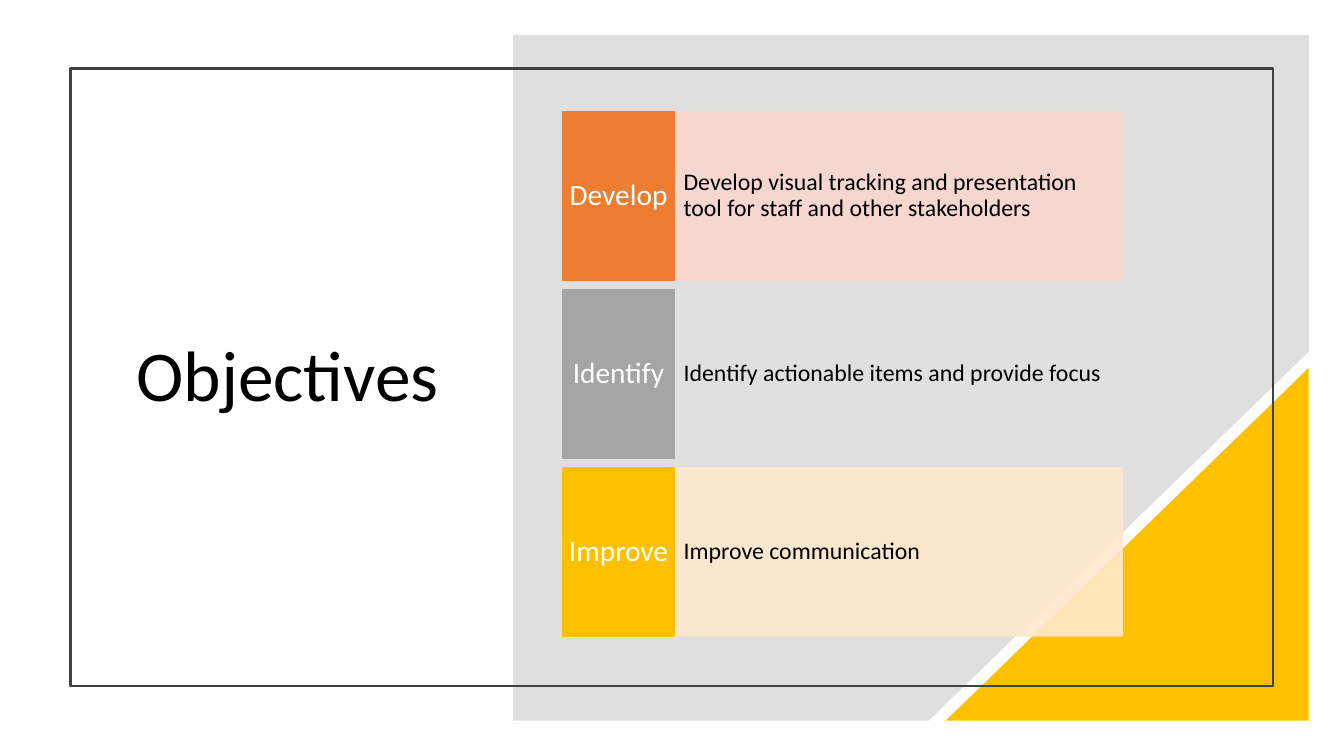
"""Build the Objectives slide with three labelled goals."""
from dataclasses import dataclass

import pptx
import pptx.dml.color
import pptx.enum.shapes
import pptx.enum.text
import pptx.oxml
import pptx.oxml.ns
import pptx.shapes.autoshape
import pptx.slide
import pptx.util
from pptx.dml.color import RGBColor
from pptx.util import Inches

WHITE = RGBColor(0xFF, 0xFF, 0xFF)
BLACK = RGBColor(0x00, 0x00, 0x00)
PANEL_GRAY = RGBColor(0x80, 0x80, 0x80)
FRAME_GRAY = RGBColor(0x40, 0x40, 0x40)
GOLD = RGBColor(0xFF, 0xC0, 0x00)
ORANGE = RGBColor(0xED, 0x7D, 0x31)
GRAY = RGBColor(0xA5, 0xA5, 0xA5)
PALE_ORANGE = RGBColor(0xF8, 0xD7, 0xCE)
PALE_GRAY = RGBColor(0xE1, 0xE1, 0xE1)
PALE_GOLD = RGBColor(0xFF, 0xE8, 0xCC)

FONT = "Calibri"
LABEL_LEFT, LABEL_WIDTH, DETAIL_WIDTH = 5.58, 1.11, 4.44
ROW_TOP, ROW_HEIGHT, ROW_PITCH = 1.11, 1.67, 1.765
PANEL_OUTLINE = [(5.09, 0.35), (12.98, 0.35), (12.98, 3.49), (9.21, 7.15), (5.09, 7.15)]

ALIGN = pptx.enum.text.PP_ALIGN
PRESET = pptx.enum.shapes.MSO_SHAPE


@dataclass(frozen=True)
class Box:
    left: float
    top: float
    width: float
    height: float

    def lengths(self) -> list[pptx.util.Length]:
        return [Inches(value) for value in (self.left, self.top, self.width, self.height)]


@dataclass(frozen=True)
class Objective:
    label: str
    detail: str
    color: RGBColor
    tint: RGBColor


OBJECTIVES = [
    Objective("Develop", "Develop visual tracking and presentation tool for staff and other stakeholders",
              ORANGE, PALE_ORANGE),
    Objective("Identify", "Identify actionable items and provide focus", GRAY, PALE_GRAY),
    Objective("Improve", "Improve communication", GOLD, PALE_GOLD),
]


def set_opacity(shape: pptx.shapes.autoshape.Shape, percent: int) -> None:
    """Apply opacity to every solid color of the fill and line."""
    for color in shape._element.spPr.iter(pptx.oxml.ns.qn("a:srgbClr")):
        alpha = color.makeelement(pptx.oxml.ns.qn("a:alpha"), {"val": str(percent * 1000)})
        color.append(alpha)


def add_block(slide: pptx.slide.Slide, preset: PRESET, box: Box, fill: RGBColor | None,
              line: RGBColor | None, line_width: float = 1) -> pptx.shapes.autoshape.Shape:
    """Add a preset shape with the given fill and outline."""
    shape = slide.shapes.add_shape(preset, *box.lengths())
    shape.shadow.inherit = False
    if fill is None:
        shape.fill.background()
    else:
        shape.fill.solid()
        shape.fill.fore_color.rgb = fill
    if line is None:
        shape.line.fill.background()
    else:
        shape.line.color.rgb = line
        shape.line.width = pptx.util.Pt(line_width)
    return shape


def write_text(shape: pptx.shapes.autoshape.Shape, text: str, size: float, color: RGBColor,
               alignment: ALIGN, side_inset: float, end_inset: float) -> None:
    """Write one vertically centred paragraph into a shape."""
    frame = shape.text_frame
    frame.word_wrap = True
    frame.vertical_anchor = pptx.enum.text.MSO_ANCHOR.MIDDLE
    frame.margin_left = frame.margin_right = Inches(side_inset)
    frame.margin_top = frame.margin_bottom = Inches(end_inset)
    paragraph = frame.paragraphs[0]
    paragraph.alignment = alignment
    paragraph.line_spacing = 0.9
    run = paragraph.add_run()
    run.text = text
    run.font.name = FONT
    run.font.size = pptx.util.Pt(size)
    run.font.color.rgb = color


def add_background(slide: pptx.slide.Slide) -> None:
    """Add the cut-corner panel, the corner triangle and the frame."""
    start, *corners = [(Inches(x), Inches(y)) for x, y in PANEL_OUTLINE]
    builder = slide.shapes.build_freeform(*start)
    builder.add_line_segments(corners, close=True)
    panel = builder.convert_to_shape()
    panel.shadow.inherit = False
    panel.fill.solid()
    panel.fill.fore_color.rgb = PANEL_GRAY
    panel.line.fill.background()
    set_opacity(panel, 25)

    triangle = add_block(slide, PRESET.RIGHT_TRIANGLE, Box(9.38, 3.65, 3.6, 3.5), GOLD, None)
    triangle._element.spPr.find(pptx.oxml.ns.qn("a:xfrm")).set("flipH", "1")
    add_block(slide, PRESET.RECTANGLE, Box(0.7, 0.68, 11.93, 6.13), None, FRAME_GRAY, 1.5)


def add_objective(slide: pptx.slide.Slide, objective: Objective, top: float) -> None:
    """Add one row: a tinted detail bar and its colored label."""
    detail_box = Box(LABEL_LEFT + LABEL_WIDTH, top, DETAIL_WIDTH, ROW_HEIGHT)
    detail = add_block(slide, PRESET.RECTANGLE, detail_box, objective.tint, objective.tint)
    set_opacity(detail, 90)
    write_text(detail, objective.detail, 17, BLACK, ALIGN.LEFT, 0.09, 0.42)

    label_box = Box(LABEL_LEFT, top, LABEL_WIDTH, ROW_HEIGHT)
    label = add_block(slide, PRESET.RECTANGLE, label_box, objective.color, objective.color)
    write_text(label, objective.label, 21, WHITE, ALIGN.CENTER, 0.05, 0.16)


def main() -> None:
    """Create and save the presentation."""
    presentation = pptx.Presentation()
    presentation.slide_width = Inches(13.33)
    presentation.slide_height = Inches(7.5)
    slide = presentation.slides.add_slide(presentation.slide_layouts[6])

    add_background(slide)
    title = slide.shapes.add_textbox(*Box(1.1, 1.3, 3.35, 4.9).lengths())
    write_text(title, "Objectives", 51, BLACK, ALIGN.RIGHT, 0.1, 0.05)
    for index, objective in enumerate(OBJECTIVES):
        add_objective(slide, objective, ROW_TOP + index * ROW_PITCH)

    presentation.save("out.pptx")


if __name__ == "__main__":
    main()
